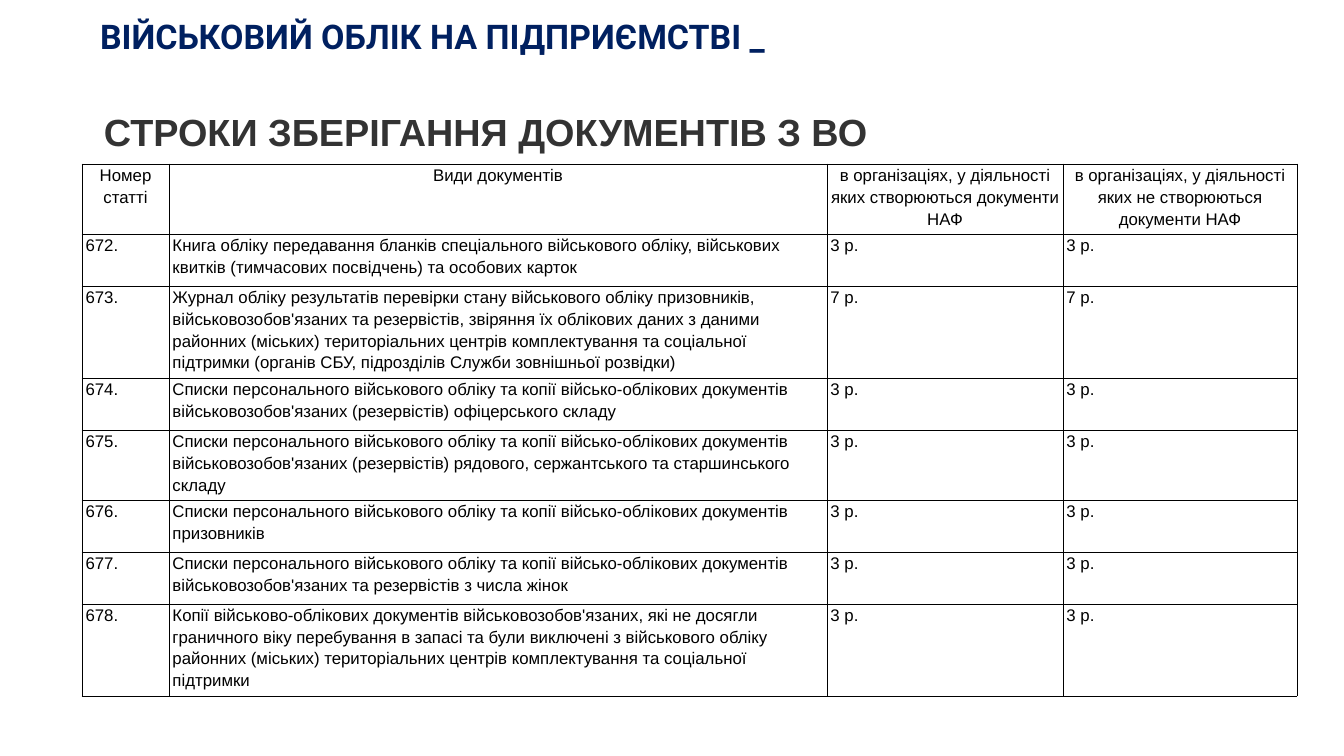
"""Build the slide on storage periods for military registration documents."""
from lxml.etree import SubElement
from pptx import Presentation
from pptx.dml.color import RGBColor
from pptx.enum.text import MSO_ANCHOR, MSO_AUTO_SIZE, PP_ALIGN
from pptx.oxml.ns import qn
from pptx.util import Pt

NAVY = RGBColor(0x00, 0x20, 0x60)
GRAY = RGBColor(0x33, 0x33, 0x33)
BLACK = RGBColor(0x00, 0x00, 0x00)
PX = 914400 / 50.4

TITLE = "ВІЙСЬКОВИЙ ОБЛІК НА ПІДПРИЄМСТВІ _"
SUBTITLE = "СТРОКИ ЗБЕРІГАННЯ ДОКУМЕНТІВ З ВО"
HEADER = (
    "Номер статті",
    "Види документів",
    "в організаціях, у діяльності яких створюються документи НАФ",
    "в організаціях, у діяльності яких не створюються документи НАФ",
)
LISTS = "Списки персонального військового обліку та копії військо-облікових документів "
DOCUMENTS = [
    ("672.", "Книга обліку передавання бланків спеціального військового обліку, "
     "військових квитків (тимчасових посвідчень) та особових карток", "3 р."),
    ("673.", "Журнал обліку результатів перевірки стану військового обліку призовників, "
     "військовозобов'язаних та резервістів, звіряння їх облікових даних з даними "
     "районних (міських) територіальних центрів комплектування та соціальної "
     "підтримки (органів СБУ, підрозділів Служби зовнішньої розвідки)", "7 р."),
    ("674.", LISTS + "військовозобов'язаних (резервістів) офіцерського складу", "3 р."),
    ("675.", LISTS + "військовозобов'язаних (резервістів) рядового, сержантського "
     "та старшинського складу", "3 р."),
    ("676.", LISTS + "призовників", "3 р."),
    ("677.", LISTS + "військовозобов'язаних та резервістів з числа жінок", "3 р."),
    ("678.", "Копії військово-облікових документів військовозобов'язаних, які не досягли "
     "граничного віку перебування в запасі та були виключені з військового обліку "
     "районних (міських) територіальних центрів комплектування та соціальної "
     "підтримки", "3 р."),
]
COL_WIDTHS = (87, 658, 236, 234)
ROW_HEIGHTS = (70, 52, 92, 52, 70, 52, 52, 92)


def px(n):
    return round(n * PX)


def style(p, name, size, color, bold, align):
    p.font.name, p.font.size, p.font.bold = name, Pt(size), bold
    p.font.color.rgb = color
    p.alignment = align


def heading(sp, text, box, name, size, color):
    sp.left, sp.top, sp.width, sp.height = map(px, box)
    tf = sp.text_frame
    tf.text = text
    tf.margin_left = tf.margin_top = tf.margin_right = tf.margin_bottom = 0
    tf.word_wrap, tf.auto_size = True, MSO_AUTO_SIZE.NONE
    tf.vertical_anchor = MSO_ANCHOR.TOP
    p = tf.paragraphs[0]
    p.space_before = Pt(0)
    style(p, name, size, color, True, PP_ALIGN.LEFT)


def add_borders(cell):
    tcPr = cell._tc.get_or_add_tcPr()
    for side in ("a:lnL", "a:lnR", "a:lnT", "a:lnB"):
        ln = SubElement(tcPr, qn(side), w=str(Pt(1)))
        fill = SubElement(ln, qn("a:solidFill"))
        SubElement(fill, qn("a:srgbClr"), val=str(BLACK))


def fill_cell(cell, text, align):
    cell.text = text
    cell.margin_left = cell.margin_right = px(3.5)
    cell.margin_top = cell.margin_bottom = 0
    p = cell.text_frame.paragraphs[0]
    p.line_spacing, p.space_after = 1.15, Pt(8)
    style(p, "Arial", 24, BLACK, False, align)
    add_borders(cell)
    cell.fill.background()


def add_documents_table(s):
    rows = [HEADER] + [(number, kind, term, term) for number, kind, term in DOCUMENTS]
    size = px(sum(COL_WIDTHS)), px(sum(ROW_HEIGHTS))
    table = s.shapes.add_table(len(rows), len(HEADER), px(82), px(164), *size).table
    table.first_row = table.horz_banding = False
    for column, width in zip(table.columns, COL_WIDTHS):
        column.width = px(width)
    for i, (row, height, texts) in enumerate(zip(table.rows, ROW_HEIGHTS, rows)):
        row.height = px(height)
        for cell, text in zip(row.cells, texts):
            fill_cell(cell, text, PP_ALIGN.LEFT if i else PP_ALIGN.CENTER)


def main():
    prs = Presentation()
    prs.slide_width, prs.slide_height = px(1344), px(756)
    s = prs.slides.add_slide(prs.slide_layouts[0])
    heading(s.shapes.title, TITLE, (100, 16, 1236, 57), "Roboto", 48.5, NAVY)
    heading(s.placeholders[1], SUBTITLE, (104, 109, 1147, 46), "Arial", 54, GRAY)
    add_documents_table(s)
    prs.save("out.pptx")


if __name__ == "__main__":
    main()
